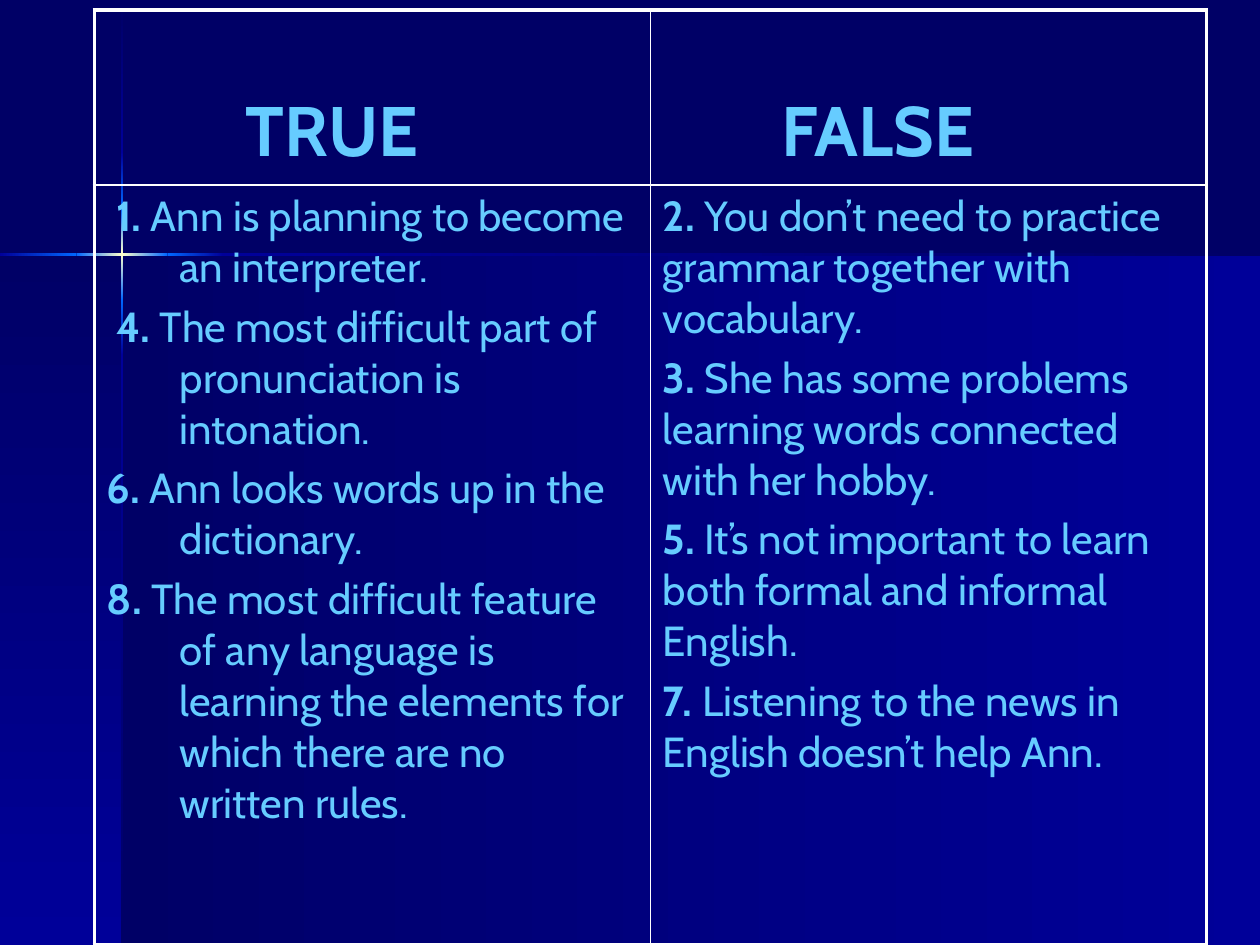
from pptx import Presentation
from pptx.dml.color import RGBColor
from pptx.enum.shapes import MSO_SHAPE
from pptx.oxml.ns import qn
from pptx.util import Cm, Pt
from lxml.etree import SubElement

COLORS = {"night": "000066", "navy": "000099", "glow": "0066FF",
          "spark": "FFFFCC", "line": "FFFFFF", "text": "66CCFF"}
FONT = "Cabin"
ACROSS, DOWN = 0, 270

PANELS = [
    (2.46, 5.13, 22.94, 13.92, ACROSS, ("night", "navy")),
    (0, 5.13, 2.46, 13.92, DOWN, ("night", "navy")),
]
BEAM = 0.05
VERTICAL_X, VERTICAL_STOPS = 2.44, [0.03, 3.07, 4.19, 6.05, 7.16, 19.05]
VERTICAL_COLORS = [("night", "navy"), ("navy", "glow"), ("glow", "spark", "glow"),
                   ("glow", "navy"), ("navy", "night")]
HORIZONTAL_Y, HORIZONTAL_STOPS = 5.11, [0, 1.54, 3.38, 4.5, 25.4]
HORIZONTAL_COLORS = [("navy", "glow"), ("glow", "spark", "glow"),
                     ("glow", "navy"), ("navy", "night")]

COLUMNS = [
    {"heading": "TRUE", "heading_indent": 2.8, "hanging": 1.47, "items": [
        (" 1.", " Ann is planning to become an interpreter."),
        (" 4.", " The most difficult part of pronunciation is intonation."),
        ("6.", " Ann looks words up in the dictionary."),
        ("8.", " The most difficult feature of any language is learning the "
               "elements for which there are no written rules."),
    ]},
    {"heading": "FALSE", "heading_indent": 2.4, "hanging": 0, "items": [
        ("2.", " You don’t need to practice grammar together with vocabulary."),
        ("3.", " She has some problems learning words connected with her hobby."),
        ("5.", " It’s not important to learn both formal and informal English."),
        ("7.", " Listening to the news in English doesn’t help Ann."),
    ]},
]
TABLE_BOX = (1.9, 0.2, 22.42, 18.85)
ROW_HEIGHTS = (3.53, 15.32)
OUTER, INNER = 2.25, 1


def add_gradient_box(page, left, top, width, height, angle, names):
    """Draw a borderless rectangle with evenly spaced gradient colours."""
    box = page.shapes.add_shape(MSO_SHAPE.RECTANGLE, Cm(left), Cm(top), Cm(width), Cm(height))
    box.shadow.inherit = False
    box.line.fill.background()
    box.fill.gradient()
    box.fill.gradient_angle = angle
    stops = next(box._element.iter(qn("a:gsLst")))
    for stop in list(stops):
        stops.remove(stop)
    for index, name in enumerate(names):
        position = str(100000 * index // (len(names) - 1))
        stop = SubElement(stops, qn("a:gs"), pos=position)
        SubElement(stop, qn("a:srgbClr"), val=COLORS[name])


def set_borders(cell, row, column):
    """Give a cell thick lines on the table's edge and thin lines inside."""
    properties = cell._tc.get_or_add_tcPr()
    outside = {"L": column == 0, "R": column == 1, "T": row == 0, "B": row == 1}
    for side, is_outer in outside.items():
        width = Pt(OUTER if is_outer else INNER)
        line = SubElement(properties, qn(f"a:ln{side}"), w=str(width))
        fill = SubElement(line, qn("a:solidFill"))
        SubElement(fill, qn("a:srgbClr"), val=COLORS["line"])
    cell.fill.background()


def style(paragraph, size, left, first):
    """Set the font and the indents of a paragraph."""
    paragraph.font.name = FONT
    paragraph.font.size = Pt(size)
    paragraph.font.color.rgb = RGBColor.from_string(COLORS["text"])
    properties = paragraph._p.get_or_add_pPr()
    properties.set("marL", str(Cm(left)))
    properties.set("indent", str(Cm(first)))


def fill_heading(cell, column):
    """Write a column heading."""
    cell.margin_top = Cm(1.6)
    paragraph = cell.text_frame.paragraphs[0]
    paragraph.text = column["heading"]
    style(paragraph, 40, column["heading_indent"], 0)
    paragraph.font.bold = True
    paragraph.runs[0].font.bold = True


def fill_items(cell, column):
    """Write the numbered statements of a column."""
    frame = cell.text_frame
    for index, (number, statement) in enumerate(column["items"]):
        paragraph = frame.add_paragraph() if index else frame.paragraphs[0]
        style(paragraph, 24, column["hanging"], -column["hanging"])
        paragraph.space_before = Pt(4.8 if index else 0)
        for text, bold in ((number, True), (statement, False)):
            span = paragraph.add_run()
            span.text = text
            span.font.bold = bold


def add_answer_table(page):
    """Add the table of true and false statements."""
    table = page.shapes.add_table(2, len(COLUMNS), *map(Cm, TABLE_BOX)).table
    table.first_row = table.horz_banding = False
    for row, height in zip(table.rows, ROW_HEIGHTS):
        row.height = Cm(height)
    for position, column in enumerate(COLUMNS):
        for row, fill_cell in enumerate((fill_heading, fill_items)):
            cell = table.cell(row, position)
            set_borders(cell, row, position)
            fill_cell(cell, column)


def main():
    """Build and save the slide."""
    deck = Presentation()
    deck.slide_width, deck.slide_height = Cm(25.4), Cm(19.05)
    page = deck.slides.add_slide(deck.slide_layouts[6])
    page.background.fill.solid()
    page.background.fill.fore_color.rgb = RGBColor.from_string(COLORS["night"])
    for panel in PANELS:
        add_gradient_box(page, *panel)
    for start, end, names in zip(VERTICAL_STOPS, VERTICAL_STOPS[1:], VERTICAL_COLORS):
        add_gradient_box(page, VERTICAL_X, start, BEAM, end - start, DOWN, names)
    for start, end, names in zip(HORIZONTAL_STOPS, HORIZONTAL_STOPS[1:], HORIZONTAL_COLORS):
        add_gradient_box(page, start, HORIZONTAL_Y, end - start, BEAM, ACROSS, names)
    add_answer_table(page)
    deck.save("out.pptx")


if __name__ == "__main__":
    main()
